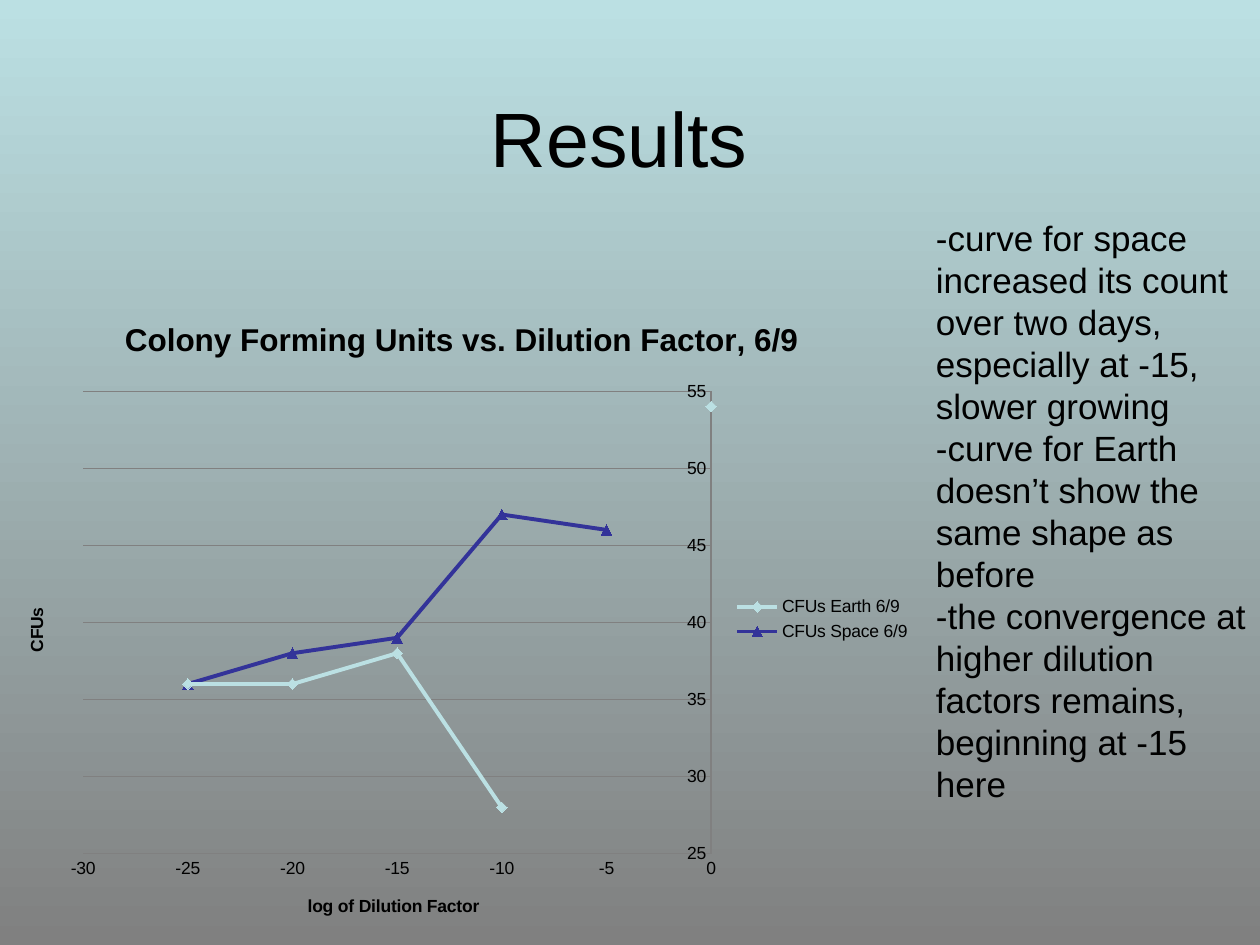
from lxml import etree
from pptx import Presentation
from pptx.chart.data import XyChartData
from pptx.dml.color import RGBColor
from pptx.enum.chart import XL_CHART_TYPE, XL_LEGEND_POSITION, XL_MARKER_STYLE, XL_TICK_MARK
from pptx.enum.text import PP_ALIGN
from pptx.oxml.ns import qn
from pptx.util import Inches, Pt

BLACK = RGBColor(0x00, 0x00, 0x00)
GRAY = RGBColor(0x80, 0x80, 0x80)
PALE_BLUE = RGBColor(0xBB, 0xE0, 0xE3)
NAVY = RGBColor(0x33, 0x33, 0x99)
FONT = "Arial"

LOG_DILUTIONS = (0, -5, -10, -15, -20, -25)
COLONY_COUNTS = {
    "CFUs Earth 6/9": ((54, None, 28, 38, 36, 36), PALE_BLUE, XL_MARKER_STYLE.DIAMOND),
    "CFUs Space 6/9": ((None, 46, 47, 39, 38, 36), NAVY, XL_MARKER_STYLE.TRIANGLE),
}
FINDINGS = (
    "-curve for space increased its count over two days, especially at -15, slower growing",
    "-curve for Earth doesn’t show the same shape as before",
    "-the convergence at higher dilution factors remains, beginning at -15 here",
)


def style_font(font, size, bold=False):
    font.name, font.size, font.bold = FONT, Pt(size), bold
    font.color.rgb = BLACK


def paint_background(slide):
    fill = slide.background.fill
    fill.gradient()
    fill.gradient_angle = 270
    for stop, color in zip(fill.gradient_stops, (PALE_BLUE, GRAY)):
        stop.color.rgb = color


def add_text(slide, box, lines, size, align):
    frame = slide.shapes.add_textbox(*box).text_frame
    frame.word_wrap = True
    for index, line in enumerate(lines):
        paragraph = frame.add_paragraph() if index else frame.paragraphs[0]
        paragraph.alignment = align
        paragraph.line_spacing = Pt(size * 1.2)
        run = paragraph.add_run()
        run.text = line
        style_font(run.font, size)


def set_title(titled, text, size):
    """Give a chart or an axis a bold title."""
    titled.has_title = True
    title = titled.chart_title if hasattr(titled, "chart_title") else titled.axis_title
    paragraph = title.text_frame.paragraphs[0]
    run = paragraph.add_run()
    run.text = text
    style_font(run.font, size, bold=True)


def style_axis(axis, title, low, high, gridlines):
    settings = {
        "minimum_scale": low,
        "maximum_scale": high,
        "major_unit": 5,
        "major_tick_mark": XL_TICK_MARK.NONE,
        "minor_tick_mark": XL_TICK_MARK.NONE,
        "has_major_gridlines": gridlines,
    }
    for name, value in settings.items():
        setattr(axis, name, value)
    lines = [axis.format.line]
    if gridlines:
        lines.append(axis.major_gridlines.format.line)
    for line in lines:
        line.color.rgb = GRAY
        line.width = Pt(0.75)
    set_title(axis, title, 10)


def place_plot(chart, **fractions):
    """Fix the inner plot area as fractions of the chart."""
    plot_area = chart.plots[0]._element.getparent()
    for old in plot_area.findall(qn("c:layout")):
        plot_area.remove(old)
    layout = etree.Element(qn("c:layout"))
    plot_area.insert(0, layout)
    manual = etree.SubElement(layout, qn("c:manualLayout"))
    values = {"layoutTarget": "inner", "xMode": "edge", "yMode": "edge", **fractions}
    for tag, value in values.items():
        etree.SubElement(manual, qn(f"c:{tag}")).set("val", str(value))


def add_colony_chart(slide, box):
    data = XyChartData()
    for name, (counts, _, _) in COLONY_COUNTS.items():
        series = data.add_series(name)
        for dilution, count in zip(LOG_DILUTIONS, counts):
            series.add_data_point(dilution, count)
    chart = slide.shapes.add_chart(XL_CHART_TYPE.XY_SCATTER_SMOOTH, *box, data).chart
    style_font(chart.font, 10)
    set_title(chart, "Colony Forming Units vs. Dilution Factor, 6/9", 18)
    style_axis(chart.category_axis, "log of Dilution Factor", -30, 0, False)
    style_axis(chart.value_axis, "CFUs", 25, 55, True)
    chart.has_legend = True
    chart.legend.position = XL_LEGEND_POSITION.RIGHT
    chart.legend.include_in_layout = False
    style_font(chart.legend.font, 10)

    plot = chart.plots[0]
    plot.vary_by_categories = False
    for series, (_, color, marker) in zip(plot.series, COLONY_COUNTS.values()):
        series.format.line.color.rgb = color
        series.format.line.width = Pt(2.25)
        series.marker.style = marker
        series.marker.size = 6
        series.marker.format.fill.solid()
        series.marker.format.fill.fore_color.rgb = color
        series.marker.format.line.color.rgb = color
        # A missing count is a gap, so its point is left out.
        for point in series._element.xpath('.//c:pt[c:v="None"]'):
            point.getparent().remove(point)
    place_plot(chart, x=0.09, y=0.15, w=0.68, h=0.71)


def main():
    deck = Presentation()
    deck.slide_width, deck.slide_height = Inches(10), Inches(7.5)
    slide = deck.slides.add_slide(deck.slide_layouts[6])
    paint_background(slide)
    title_box = (Inches(1.75), Inches(0.67), Inches(6.33), Inches(0.84))
    chart_box = (Inches(0), Inches(2.33), Inches(7.33), Inches(5.17))
    findings_box = (Inches(7.33), Inches(1.67), Inches(2.67), Inches(4.81))
    add_text(slide, title_box, ["Results"], 44, PP_ALIGN.CENTER)
    add_colony_chart(slide, chart_box)
    add_text(slide, findings_box, FINDINGS, 20, PP_ALIGN.LEFT)
    deck.save("out.pptx")


if __name__ == "__main__":
    main()
